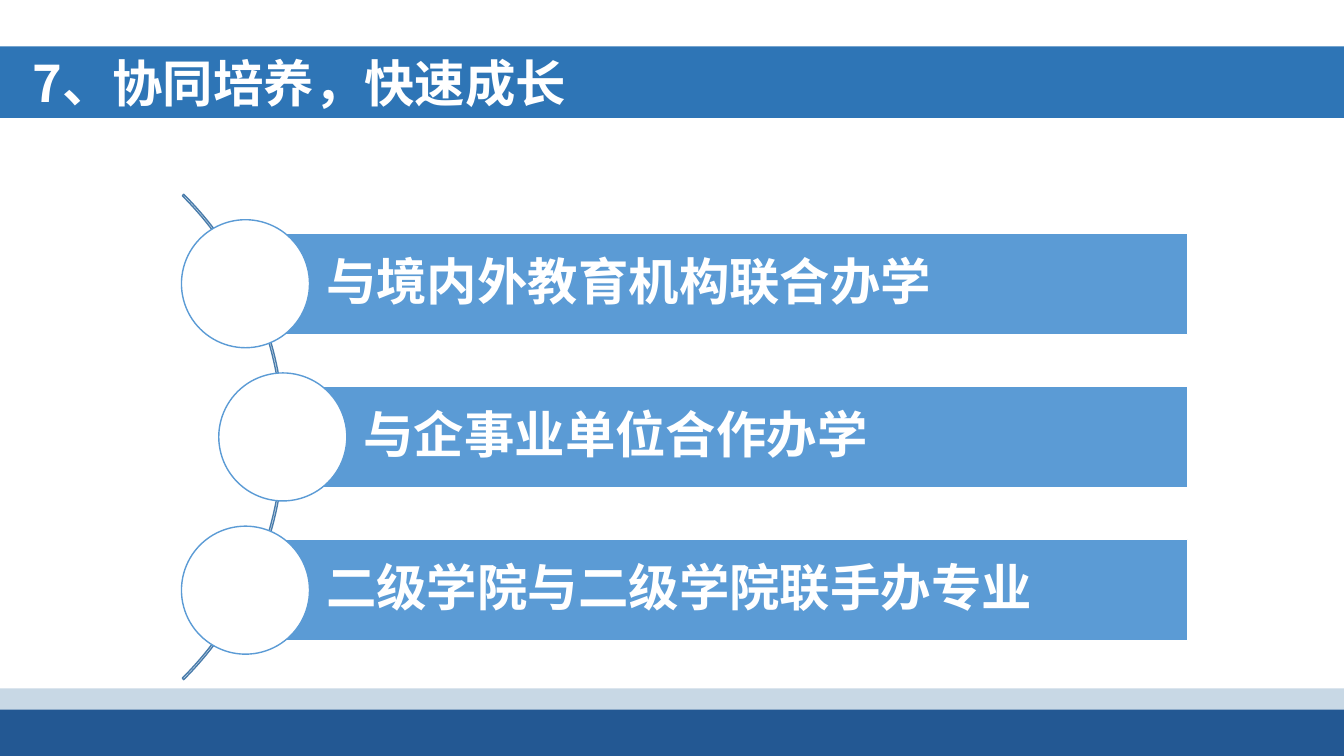
from lxml import etree
from pptx import Presentation
from pptx.dml.color import RGBColor
from pptx.enum.shapes import MSO_SHAPE
from pptx.enum.text import MSO_ANCHOR, MSO_AUTO_SIZE, PP_ALIGN
from pptx.oxml.ns import qn
from pptx.util import Inches, Pt

RECT = MSO_SHAPE.RECTANGLE
OVAL = MSO_SHAPE.OVAL
ARC = MSO_SHAPE.BLOCK_ARC
MIDDLE = MSO_ANCHOR.MIDDLE
LEFT = PP_ALIGN.LEFT
FIXED = MSO_AUTO_SIZE.NONE

FONT = "Noto Sans CJK SC"
COLORS = {
    "white": "FFFFFF",
    "title": "2E75B6",
    "bar": "5B9BD5",
    "arc": "497CAB",
    "pale": "C8D8E5",
    "navy": "235893",
}
ITEMS = [
    ("与境内外教育机构联合办学", 0),
    ("与企事业单位合作办学", 0.37),
    ("二级学院与二级学院联手办专业", 0),
]


def color(name):
    return RGBColor.from_string(COLORS[name])


def write(shape, text, size=36, fill="white", inset=0.1, pad=0.1, space=1.0):
    frame = shape.text_frame
    frame.auto_size = FIXED
    frame.word_wrap = True
    frame.vertical_anchor = MIDDLE
    frame.margin_left, frame.margin_right = Inches(inset), Inches(0.1)
    frame.margin_top = frame.margin_bottom = Inches(pad)
    line = frame.paragraphs[0]
    line.alignment = LEFT
    line.line_spacing = space
    run = line.add_run()
    run.text = text
    run.font.size = Pt(size)
    run.font.bold = True
    run.font.color.rgb = color(fill)
    run.font.name = FONT
    east = etree.SubElement(run.font._element, qn("a:ea"))
    east.set("typeface", FONT)


def draw(slide, kind, box, fill=None, edge=None):
    shape = slide.shapes.add_shape(kind, *map(Inches, box))
    shape.shadow.inherit = False
    if fill:
        shape.fill.solid()
        shape.fill.fore_color.rgb = color(fill)
    else:
        shape.fill.background()
    if edge:
        shape.line.color.rgb = color(edge)
        shape.line.width = Pt(1)
    else:
        shape.line.fill.background()
    return shape


def add_foot(slide, box):
    left, top, width, height = box
    draw(slide, RECT, (left, top, width, 0.55), "pale")
    draw(slide, RECT, (left, top + 0.21, width, height - 0.21), "navy")


def add_title(slide, box):
    title = slide.shapes.title
    title.left, title.top, title.width, title.height = map(Inches, box)
    title.fill.solid()
    title.fill.fore_color.rgb = color("title")
    write(title, "7、协同培养，快速成长", inset=0.32, pad=0)


def add_list(slide, box):
    left, top, width, height = box
    ring, disc, bar, step = 6.81, 1.27, 1.01, 1.52
    mid = top + height / 2
    arc = draw(slide, ARC, (left - 5.79, mid - ring / 2, ring, ring), edge="arc")
    for index, value in enumerate((189, 27, 0.003)):
        arc.adjustments[index] = value
    for row, (text, shift) in enumerate(ITEMS):
        center = mid + (row - 1) * step
        start = left + shift + disc / 2
        band = (start, center - bar / 2, left + width - start, bar)
        write(draw(slide, RECT, band, "bar", "white"), text, inset=0.8, space=0.9)
        spot = (left + shift, center - disc / 2, disc, disc)
        draw(slide, OVAL, spot, "white", "bar")


def main():
    deck = Presentation()
    deck.slide_width, deck.slide_height = Inches(13.33), Inches(7.5)
    slide = deck.slides.add_slide(deck.slide_layouts[5])
    add_foot(slide, (0, 6.83, 13.33, 0.67))
    add_title(slide, (0, 0.46, 13.33, 0.71))
    add_list(slide, (1.8, 2.18, 9.98, 4.31))
    deck.save("out.pptx")


if __name__ == "__main__":
    main()
